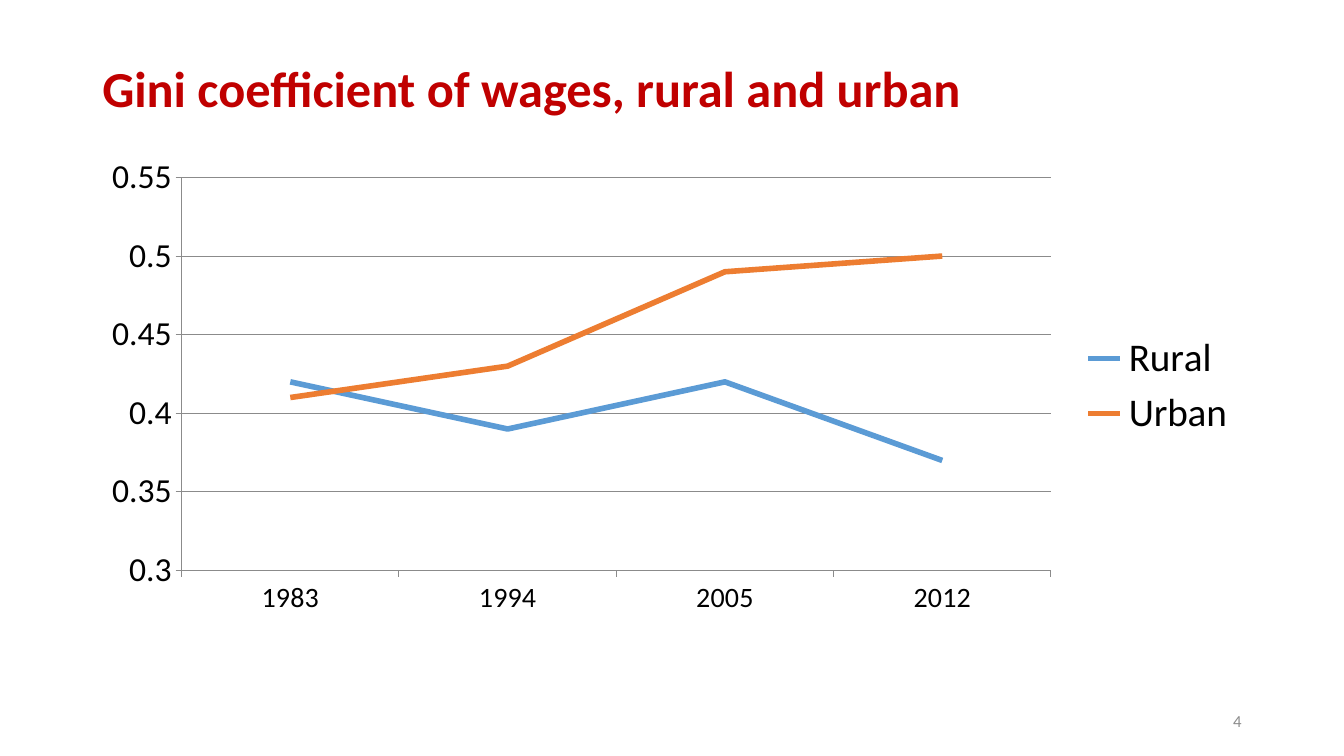
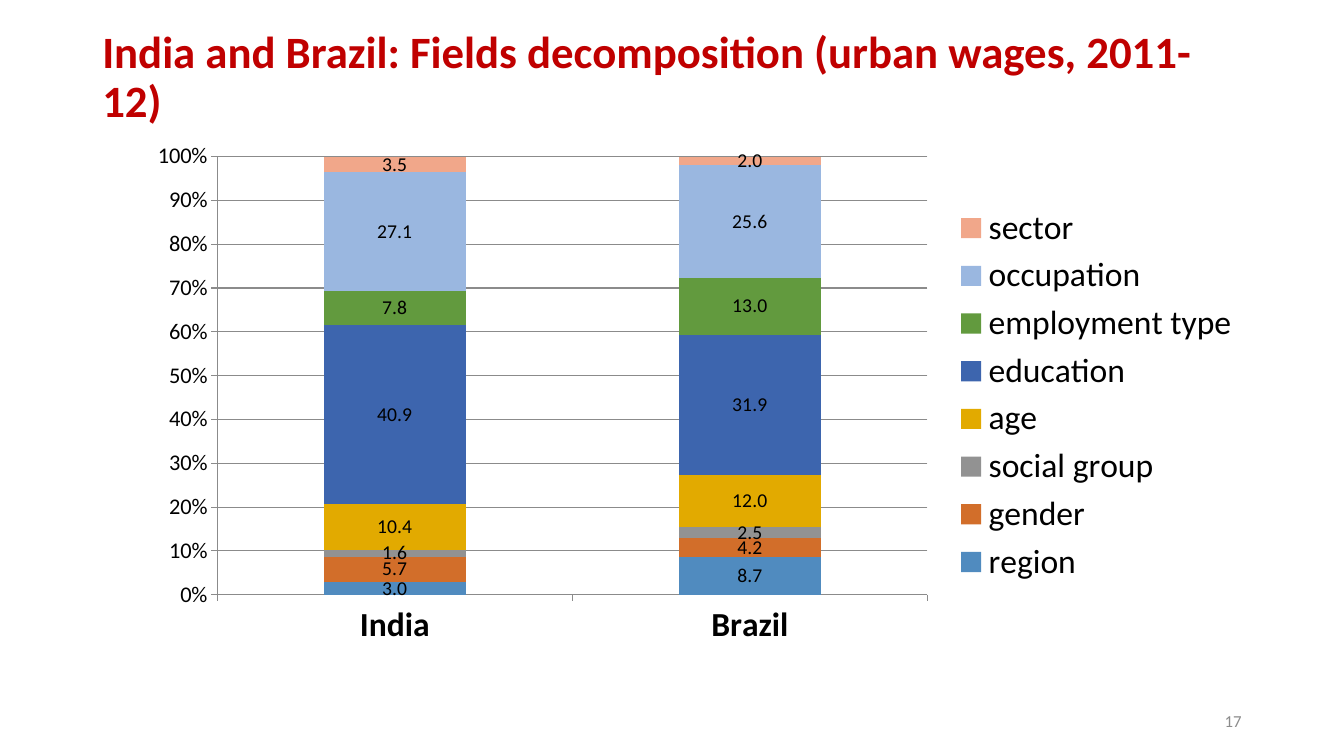
from pptx import Presentation
from pptx.chart.data import CategoryChartData
from pptx.dml.color import RGBColor
from pptx.enum.chart import XL_CHART_TYPE, XL_LABEL_POSITION, XL_LEGEND_POSITION, XL_TICK_MARK
from pptx.enum.text import MSO_ANCHOR, PP_ALIGN
from pptx.oxml import parse_xml
from pptx.oxml.ns import nsdecls, qn
from pptx.util import Pt

FONT = "Calibri"
COLORS = {
    "title": "C00000",
    "text": "000000",
    "page": "8C8C8C",
    "axis": "8B8B8B",
    "Rural": "5B9BD5",
    "Urban": "ED7D31",
    "region": "508BBF",
    "gender": "D26E2A",
    "social group": "929292",
    "age": "E2AA00",
    "education": "3D65AE",
    "employment type": "629A3E",
    "occupation": "9AB7E0",
    "sector": "F1A78A",
}
WAGE_GINI = {
    "Rural": (0.42, 0.39, 0.42, 0.37),
    "Urban": (0.41, 0.43, 0.49, 0.5),
}
WAGE_SHARES = {
    "region": (3, 8.7),
    "gender": (5.7, 4.2),
    "social group": (1.6, 2.5),
    "age": (10.4, 12),
    "education": (40.9, 31.9),
    "employment type": (7.8, 13),
    "occupation": (27.1, 25.6),
    "sector": (3.5, 2),
}


def color(name):
    return RGBColor.from_string(COLORS[name])


def points(box):
    return [Pt(length) for length in box]


def style_font(font, size, color_name="text", bold=False):
    font.name = FONT
    font.size = Pt(size)
    font.bold = bold
    font.color.rgb = color(color_name)


def add_text(slide, box, text, size, color_name, bold=False, align=PP_ALIGN.LEFT):
    frame = slide.shapes.add_textbox(*points(box)).text_frame
    frame.word_wrap = True
    frame.vertical_anchor = MSO_ANCHOR.MIDDLE
    paragraph = frame.paragraphs[0]
    paragraph.text = text
    paragraph.alignment = align
    style_font(paragraph.font, size, color_name, bold)
    return paragraph


def add_titled_slide(presentation, title, title_size, title_height, page_number):
    slide = presentation.slides.add_slide(presentation.slide_layouts[6])
    heading = add_text(slide, (66, 29, 828, title_height), title, title_size, "title", bold=True)
    heading.line_spacing = 0.9
    add_text(slide, (678, 500.5, 216, 29), page_number, 12, "page", align=PP_ALIGN.RIGHT)
    return slide


def place_plot(chart, fractions):
    plot_area = chart.element.find(".//" + qn("c:plotArea"))
    for layout in plot_area.findall(qn("c:layout")):
        plot_area.remove(layout)
    sizes = "".join(f'<c:{key} val="{value}"/>' for key, value in zip("xywh", fractions))
    plot_area.insert(0, parse_xml(
        f'<c:layout {nsdecls("c")}><c:manualLayout><c:layoutTarget val="inner"/>'
        f'<c:xMode val="edge"/><c:yMode val="edge"/>{sizes}</c:manualLayout></c:layout>'))


def style_axis(axis, size, bold=False):
    style_font(axis.tick_labels.font, size, bold=bold)
    axis.major_tick_mark = XL_TICK_MARK.OUTSIDE
    axis.minor_tick_mark = XL_TICK_MARK.NONE
    axis.format.line.color.rgb = color("axis")
    axis.format.line.width = Pt(0.75)


def add_chart(slide, box, chart_type, categories, values, plot_fractions, legend_size):
    data = CategoryChartData(number_format="General")
    data.categories = categories
    for name, numbers in values.items():
        data.add_series(name, numbers)
    chart = slide.shapes.add_chart(chart_type, *points(box), data).chart
    chart.has_title = False
    style_font(chart.font, 10)
    chart.plots[0].vary_by_categories = False
    chart.has_legend = True
    chart.legend.position = XL_LEGEND_POSITION.RIGHT
    chart.legend.include_in_layout = False
    style_font(chart.legend.font, legend_size)
    gridlines = chart.value_axis.major_gridlines.format.line
    gridlines.color.rgb = color("axis")
    gridlines.width = Pt(0.75)
    place_plot(chart, plot_fractions)
    return chart


def add_gini_chart(slide, box):
    chart = add_chart(slide, box, XL_CHART_TYPE.LINE, ("1983", "1994", "2005", "2012"),
                      WAGE_GINI, (0.08, 0.065, 0.75, 0.82), 28)
    style_axis(chart.category_axis, 20)
    style_axis(chart.value_axis, 24)
    chart.value_axis.minimum_scale = 0.3
    chart.value_axis.maximum_scale = 0.55
    chart.value_axis.major_unit = 0.05
    for series in chart.series:
        series.smooth = False
        series.format.line.color.rgb = color(series.name)
        series.format.line.width = Pt(4)


def add_decomposition_chart(slide, box):
    chart = add_chart(slide, box, XL_CHART_TYPE.COLUMN_STACKED_100, ("India", "Brazil"),
                      WAGE_SHARES, (0.073, 0.045, 0.637, 0.836), 24)
    style_axis(chart.category_axis, 24, bold=True)
    style_axis(chart.value_axis, 16)
    chart.value_axis.tick_labels.number_format = "0%"
    chart.value_axis.tick_labels.number_format_is_linked = False
    plot = chart.plots[0]
    plot.gap_width = 150
    plot.overlap = 100
    for series in chart.series:
        series.format.fill.solid()
        series.format.fill.fore_color.rgb = color(series.name)
        labels = series.data_labels
        labels.show_value = True
        labels.number_format = "0.0"
        labels.number_format_is_linked = False
        labels.position = XL_LABEL_POSITION.CENTER
        style_font(labels.font, 14)


def main():
    presentation = Presentation()
    presentation.slide_width = Pt(960)
    presentation.slide_height = Pt(540)
    gini_slide = add_titled_slide(
        presentation, "Gini coefficient of wages, rural and urban", 36, 72, "4")
    add_gini_chart(gini_slide, (63.5, 104.5, 828, 342.5))
    decomposition_slide = add_titled_slide(
        presentation, "India and Brazil: Fields decomposition (urban wages, 2011-12)", 32, 54, "17")
    add_decomposition_chart(decomposition_slide, (97, 95, 796.5, 374.5))
    presentation.save("out.pptx")


if __name__ == "__main__":
    main()
